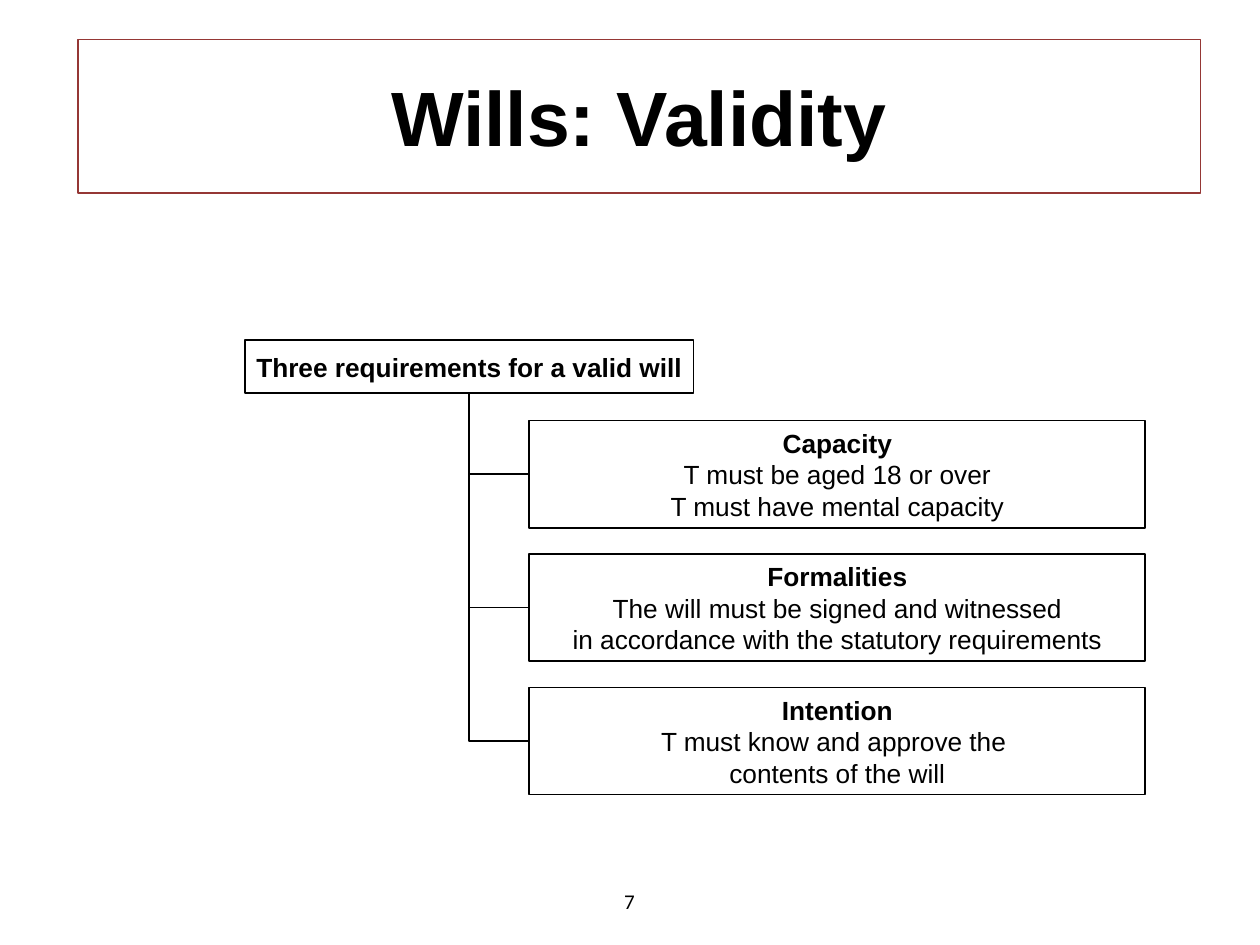
from pptx import Presentation
from pptx import util as u
from pptx.dml.color import RGBColor
from pptx.enum import shapes, text
from pptx.oxml import parse_xml
from pptx.oxml.ns import nsdecls

BLACK = RGBColor(0x00, 0x00, 0x00)
WHITE = RGBColor(0xFF, 0xFF, 0xFF)
DARK_RED = RGBColor(0x95, 0x37, 0x35)

LEFT_SIDE, BOTTOM_SIDE = 1, 2  # connection sites of a rectangle

REQUIREMENTS = [
    ("Capacity", "T must be aged 18 or over", "T must have mental capacity"),
    ("Formalities", "The will must be signed and witnessed",
     "in accordance with the statutory requirements"),
    ("Intention", "T must know and approve the ", "contents of the will"),
]


def apply(target, values):
    for name, value in values.items():
        setattr(target, name, value)


def place(shape, left, top, width, height):
    apply(shape, dict(left=u.Cm(left), top=u.Cm(top),
                      width=u.Cm(width), height=u.Cm(height)))


class SlideBuilder:
    """Holds the text and line style and the slide being filled."""

    title_font = dict(name="Arial", size=u.Pt(44), bold=True)
    box_font = dict(name="Arial", size=u.Pt(15))
    number_font = dict(name="Calibri", size=u.Pt(12), bold=False)
    box_frame = dict(word_wrap=False, vertical_anchor=text.MSO_ANCHOR.MIDDLE,
                     margin_left=u.Cm(0.2), margin_right=u.Cm(0.2),
                     margin_top=u.Cm(0.1), margin_bottom=u.Cm(0.1))

    def __init__(self, slide):
        self.slide = slide

    def fill_line(self, paragraph, words, font):
        """Put centred black words into a paragraph."""
        paragraph.text = words
        paragraph.alignment = text.PP_ALIGN.CENTER
        apply(paragraph.font, font)
        paragraph.font.color.rgb = BLACK

    def outline(self, shape, color, width):
        shape.line.color.rgb = color
        shape.line.width = u.Pt(width)

    def title(self, words, *area):
        heading = self.slide.shapes.title
        place(heading, *area)
        self.outline(heading, DARK_RED, 0.75)
        heading.text_frame.vertical_anchor = text.MSO_ANCHOR.MIDDLE
        self.fill_line(heading.text_frame.paragraphs[0], words, self.title_font)

    def box(self, lines, *area):
        """Draw a framed box whose first line is bold."""
        frame = self.slide.shapes.add_shape(
            shapes.MSO_SHAPE.RECTANGLE, *(u.Cm(length) for length in area))
        frame.shadow.inherit = False
        frame.fill.solid()
        frame.fill.fore_color.rgb = WHITE
        self.outline(frame, BLACK, 1)
        body = frame.text_frame
        apply(body, self.box_frame)
        for index, line in enumerate(lines):
            paragraph = body.add_paragraph() if index else body.paragraphs[0]
            self.fill_line(paragraph, line, dict(self.box_font, bold=index == 0))
        return frame

    def branch(self, child, parent):
        """Run a one-corner connector from the child's left to the parent's foot."""
        link = self.slide.shapes.add_connector(
            shapes.MSO_CONNECTOR.ELBOW, 0, 0, 0, 0)
        link.begin_connect(child, LEFT_SIDE)
        link.end_connect(parent, BOTTOM_SIDE)
        self.outline(link, BLACK, 1)
        properties = link._element.spPr
        properties.prstGeom.set("prst", "bentConnector2")
        properties.append(parse_xml(f"<a:effectLst {nsdecls('a')}/>"))

    def page_number(self, number, *area):
        label = self.slide.shapes.add_textbox(*(u.Cm(length) for length in area))
        apply(label.text_frame, dict(word_wrap=True,
                                     vertical_anchor=text.MSO_ANCHOR.MIDDLE))
        self.fill_line(label.text_frame.paragraphs[0], number, self.number_font)


def main():
    deck = Presentation()
    apply(deck, dict(slide_width=u.Cm(25.4), slide_height=u.Cm(19.05)))
    title_only = deck.slide_layouts[5]
    builder = SlideBuilder(deck.slides.add_slide(title_only))

    builder.title("Wills: Validity", 1.57, 0.79, 22.63, 3.1)
    root = builder.box(["Three requirements for a valid will"],
                       4.94, 6.86, 9.04, 1.07)
    first_top, step = 8.48, 2.69
    for row, lines in enumerate(REQUIREMENTS):
        requirement = builder.box(lines, 10.67, first_top + row * step, 12.42, 2.16)
        builder.branch(requirement, root)
    builder.page_number("7", 9.73, 17.65, 5.92, 1.02)

    deck.save("out.pptx")


if __name__ == "__main__":
    main()
